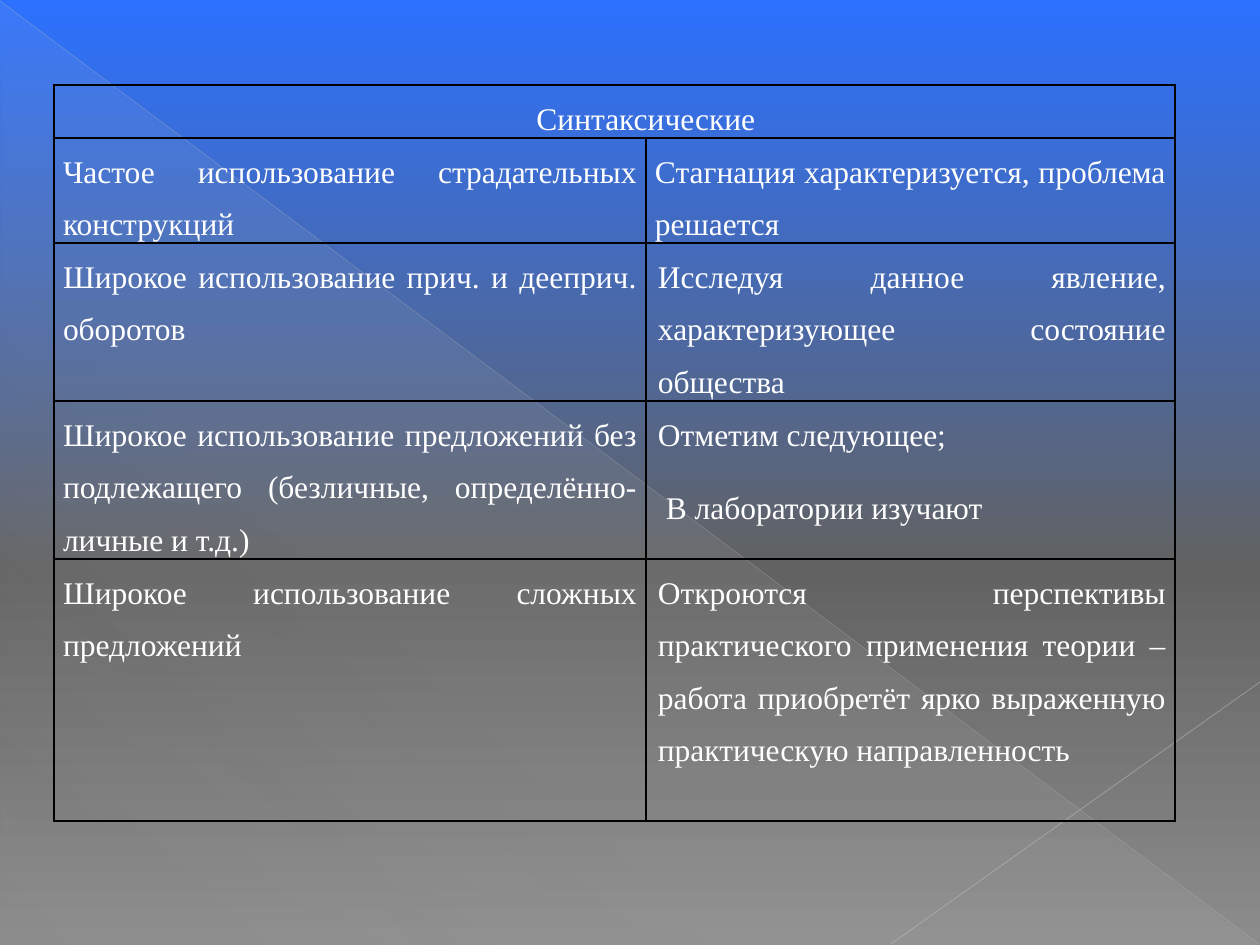
from lxml.etree import SubElement
from pptx import Presentation
from pptx.dml.color import RGBColor
from pptx.enum.shapes import MSO_CONNECTOR as Connector, MSO_SHAPE as Shape
from pptx.enum.text import PP_ALIGN as Align
from pptx.oxml.ns import qn
from pptx.util import Emu, Pt

FONT = {"name": "Times New Roman", "size": Pt(18)}
PARAGRAPH = {"line_spacing": 1.5, "space_before": Pt(12)}
TABLE_FLAGS = {"first_row": False, "horz_banding": False}
COLUMNS = [592, 529]
ROWS = [53, 105, 158, 158, 262]
HEADING = "Синтаксические"
HEADING_INDENT = 63
EXAMPLES = [
    ("Частое использование страдательных конструкций",
     ["Стагнация характеризуется, проблема решается"], 0),
    ("Широкое использование прич. и дееприч. оборотов",
     ["Исследуя данное явление, характеризующее состояние общества"], 3),
    ("Широкое использование предложений без подлежащего "
     "(безличные, определённо-личные и т.д.)",
     ["Отметим следующее;", " В лаборатории изучают"], 3),
    ("Широкое использование сложных предложений",
     ["Откроются перспективы практического применения теории – "
      "работа приобретёт ярко выраженную практическую направленность"], 3),
]


def px(length):
    """Turn pixels into EMU."""
    return Emu(round(length * 914400 / 126))


def rgb(value):
    """Turn a hex string into a colour."""
    return RGBColor.from_string(value)


def apply_format(target, values):
    """Set attributes from a dict."""
    for name, value in values.items():
        setattr(target, name, value)


def add_alpha(color, percent):
    """Make a colour element partly transparent."""
    SubElement(color, qn("a:alpha"), val=str(percent * 1000))


def set_gradient(fill, parent, stops, angle):
    """Give the parent element a linear gradient of (position, colour, alpha) stops."""
    fill.solid()
    solid = parent.find(qn("a:solidFill"))
    gradient = SubElement(parent, qn("a:gradFill"), rotWithShape="1")
    parent.replace(solid, gradient)
    stop_list = SubElement(gradient, qn("a:gsLst"))
    for position, color, alpha in stops:
        stop = SubElement(stop_list, qn("a:gs"), pos=str(position * 1000))
        add_alpha(SubElement(stop, qn("a:srgbClr"), val=color), alpha)
    SubElement(gradient, qn("a:lin"), ang=str(angle * 60000), scaled="0")


def add_background(slide):
    """Paint the blue to grey background."""
    fill = slide.background.fill
    fill.solid()
    properties = slide.element.find(".//" + qn("p:bgPr"))
    stops = [(0, "2C71FF", 100), (60, "626262", 100), (100, "8C8C8C", 100)]
    set_gradient(fill, properties, stops, 90)


def add_triangle(slide):
    """Add the faint triangle under the diagonal."""
    shape = slide.shapes.add_shape(Shape.RIGHT_TRIANGLE, px(1), px(2), px(1258), px(943))
    shape.shadow.inherit = False
    shape.line.fill.background()
    stops = [(0, "D2D2D2", 10), (70, "D2D2D2", 8), (100, "D2D2D2", 1)]
    set_gradient(shape.fill, shape.element.spPr, stops, 133)


def add_line(slide, start, end, color, width, alpha):
    """Add a thin translucent line."""
    points = [px(value) for value in (*start, *end)]
    line = slide.shapes.add_connector(Connector.STRAIGHT, *points)
    line.line.color.rgb = rgb(color)
    line.line.width = Pt(width)
    properties = line.element.spPr
    add_alpha(properties.find(".//" + qn("a:srgbClr")), alpha)
    SubElement(properties, qn("a:effectLst"))


def set_borders(cell):
    """Draw a black border on all four sides of a cell."""
    properties = cell._tc.get_or_add_tcPr()
    for index, side in enumerate("LRTB"):
        border = SubElement(properties, qn(f"a:ln{side}"), w=str(Pt(1)))
        fill = SubElement(border, qn("a:solidFill"))
        SubElement(fill, qn("a:srgbClr"), val="000000")
        properties.insert(index, border)


def fill_cell(cell, texts, align=Align.JUSTIFY, indent=0):
    """Write one paragraph per text into a cell."""
    frame = cell.text_frame
    for index, text in enumerate(texts):
        paragraph = frame.add_paragraph() if index else frame.paragraphs[0]
        apply_format(paragraph, {**PARAGRAPH, "alignment": align})
        properties = paragraph._p.get_or_add_pPr()
        properties.set("marL", str(px(indent)))
        properties.set("indent", "0")
        run = paragraph.add_run()
        run.text = text
        apply_format(run.font, FONT)
        run.font.color.rgb = rgb("FFFFFF")


def add_syntax_table(slide):
    """Add the table of syntactic features and examples."""
    frame = slide.shapes.add_table(len(ROWS), len(COLUMNS), px(54), px(85),
                                   px(sum(COLUMNS)), px(sum(ROWS)))
    table = frame.table
    apply_format(table, TABLE_FLAGS)
    for column, width in zip(table.columns, COLUMNS):
        column.width = px(width)
    for row, height in zip(table.rows, ROWS):
        row.height = px(height)
    margins = {"margin_left": px(9), "margin_right": px(9),
               "margin_top": 0, "margin_bottom": 0}
    for cell in table.iter_cells():
        apply_format(cell, margins)
        cell.fill.background()
        set_borders(cell)
    table.cell(0, 0).merge(table.cell(0, 1))
    fill_cell(table.cell(0, 0), [HEADING], Align.CENTER, HEADING_INDENT)
    for row, (feature, examples, indent) in enumerate(EXAMPLES, 1):
        fill_cell(table.cell(row, 0), [feature])
        fill_cell(table.cell(row, 1), examples, indent=indent)


def main():
    """Build and save the slide."""
    presentation = Presentation()
    apply_format(presentation, {"slide_width": px(1260), "slide_height": px(945)})
    slide = presentation.slides.add_slide(presentation.slide_layouts[6])
    add_background(slide)
    add_triangle(slide)
    add_line(slide, (0, 1), (1259, 944), "BFBFBF", 0.39, 35)
    add_line(slide, (1260, 682), (891, 944), "C6C6C6", 0.47, 45)
    add_syntax_table(slide)
    presentation.save("out.pptx")


if __name__ == "__main__":
    main()
